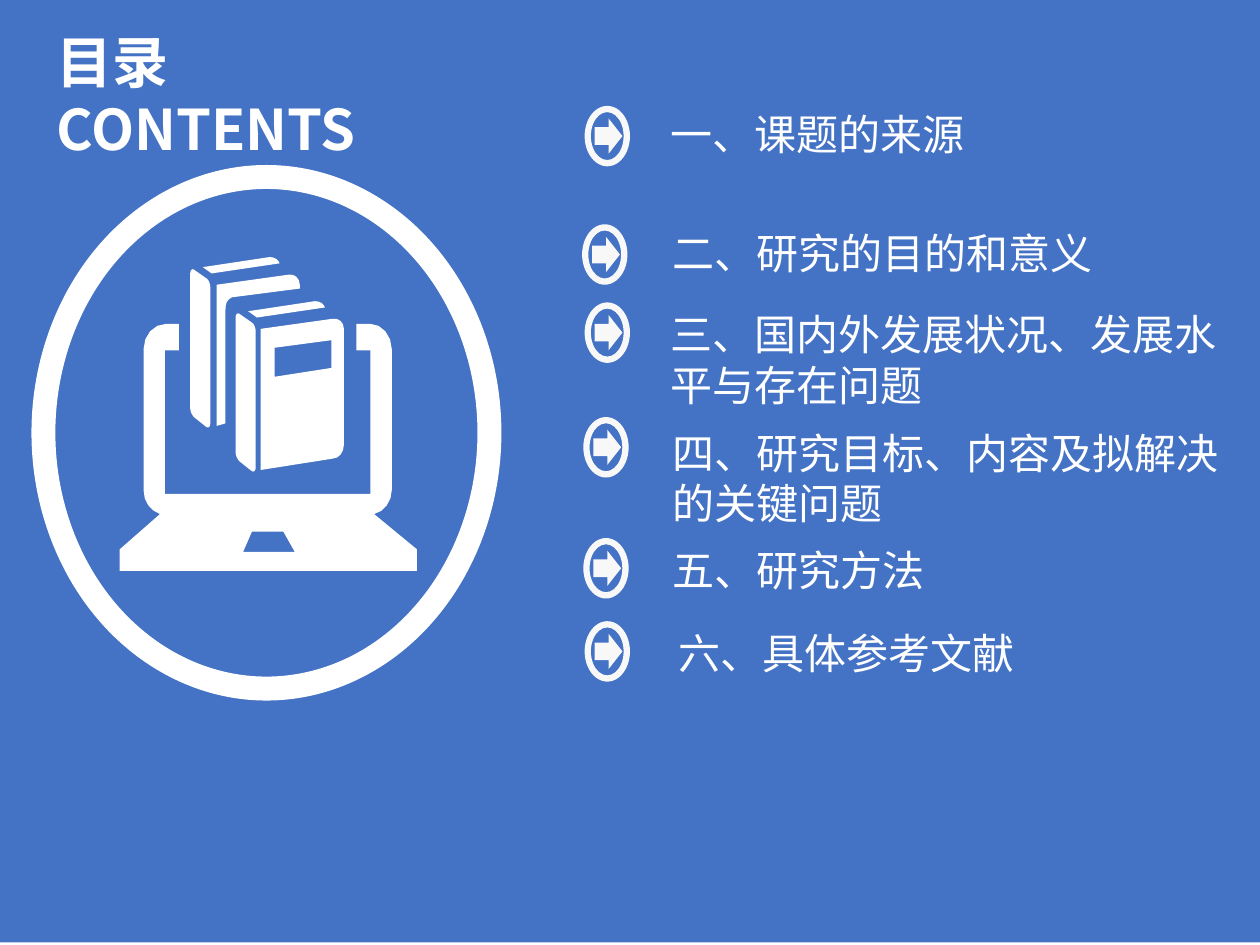
import math

from lxml import etree
from pptx import Presentation
from pptx.dml.color import RGBColor
from pptx.enum import shapes, text
from pptx.oxml import ns
from pptx.util import Inches, Pt

BLUE = RGBColor(0x44, 0x72, 0xC4)
WHITE = RGBColor(0xFF, 0xFF, 0xFF)
OFF_WHITE = RGBColor(0xF8, 0xF8, 0xF8)
FONT = "Noto Sans CJK SC"

# Badge left and top, text left, top, width and height, wrap, wording
ITEMS = [
    (4.64, 0.84, 5.22, 0.81, 2.56, 0.5, False, "一、课题的来源"),
    (4.62, 1.78, 5.24, 1.76, 3.57, 0.5, False, "二、研究的目的和意义"),
    (4.64, 2.40, 5.22, 2.40, 4.68, 0.91, True, "三、国内外发展状况、发展水平与存在问题"),
    (4.63, 3.31, 5.24, 3.34, 4.68, 0.91, True, "四、研究目标、内容及拟解决的关键问题"),
    (4.63, 4.27, 5.24, 4.27, 2.22, 0.5, False, "五、研究方法"),
    (4.64, 4.93, 5.29, 4.93, 3.46, 0.81, True, "六、具体参考文献"),
]

# Outlines in inches from the icon's corner: pairs are line ends,
# sixes are two control points and the end of a curve.
BOOK_TOP = [(1.36, 0.81), (1.43, 0.86), (1.97, 0.78),
            (1.96, 0.75, 1.93, 0.73, 1.89, 0.73)]
BOOK_SPINE = [(1.29, 0.83), (1.39, 0.90), (1.41, 0.91, 1.42, 0.95, 1.42, 0.97),
              (1.42, 2.05), (1.42, 2.07, 1.41, 2.09, 1.39, 2.08), (1.29, 2.00),
              (1.28, 1.99, 1.26, 1.96, 1.26, 1.93), (1.26, 0.86),
              (1.26, 0.83, 1.28, 0.82, 1.29, 0.83)]
FRONT_COVER = [(1.82, 1.30), (2.39, 1.22), (2.44, 1.21, 2.48, 1.25, 2.48, 1.30),
               (2.48, 2.22), (2.48, 2.28, 2.44, 2.33, 2.39, 2.33), (1.82, 2.42)]
COVER_LABEL = [(1.93, 1.45), (2.38, 1.39), (2.38, 1.61), (1.93, 1.68)]
BACK_COVER = [(1.47, 0.95), (2.04, 0.87), (2.09, 0.86, 2.13, 0.90, 2.13, 0.95),
              (2.13, 0.98), (1.59, 1.05), (1.55, 1.07, 1.54, 1.10, 1.54, 1.15),
              (1.54, 2.05), (1.47, 2.07)]
TOUCHPAD = [(1.75, 2.91), (2.00, 2.91), (2.09, 3.07), (1.68, 3.07)]
LAPTOP = [(1.06, 1.47), (1.17, 1.47), (1.17, 1.26), (1.07, 1.26),
          (0.97, 1.26, 0.89, 1.35, 0.89, 1.46), (0.89, 2.58),
          (0.89, 2.67, 0.94, 2.74, 1.02, 2.77), (0.70, 3.05), (0.70, 3.22),
          (3.06, 3.22), (3.06, 3.05), (2.72, 2.77),
          (2.80, 2.75, 2.86, 2.67, 2.86, 2.58), (2.86, 1.46),
          (2.86, 1.35, 2.78, 1.26, 2.69, 1.26), (2.58, 1.26), (2.58, 1.47),
          (2.69, 1.47), (2.69, 2.61), (1.06, 2.61)]


def flatten(outline, steps=4):
    """Turn the curves of an outline into short straight steps."""
    points = []
    for part in outline:
        if len(part) == 2:
            points.append(part)
            continue
        ctrl = [points[-1], part[:2], part[2:4], part[4:]]
        for i in range(1, steps + 1):
            t = i / steps
            weights = [math.comb(3, k) * t**k * (1 - t)**(3 - k) for k in range(4)]
            points.append(tuple(sum(c * p[axis] for c, p in zip(weights, ctrl))
                                for axis in (0, 1)))
    return points


def shift(points, dx, dy):
    return [(x + dx, y + dy) for x, y in points]


def paint(sp, color):
    sp.shadow.inherit = False
    sp.fill.solid()
    sp.fill.fore_color.rgb = color
    sp.line.fill.background()


def add_preset(s, kind, left, top, width, height, color):
    sp = s.shapes.add_shape(kind, Inches(left), Inches(top),
                            Inches(width), Inches(height))
    paint(sp, color)
    return sp


def add_ring(s, left, top, width, height, thickness, color):
    sp = add_preset(s, shapes.MSO_SHAPE.DONUT, left, top, width, height, color)
    sp.adjustments[0] = thickness / min(width, height)


def add_outlines(s, left, top, outlines, color):
    """Draw closed outlines as one shape; inner outlines cut holes."""
    contours = [[(Inches(x), Inches(y)) for x, y in shift(points, left, top)]
                for points in outlines]
    builder = s.shapes.build_freeform(*contours[0][0], scale=1.0)
    for i, points in enumerate(contours):
        if i:
            builder.move_to(*points[0])
        builder.add_line_segments(points[1:], close=True)
    paint(builder.convert_to_shape(), color)


def add_text(p, wording, size, bold=False):
    p.alignment = text.PP_ALIGN.LEFT
    r = p.add_run()
    r.text = wording
    r.font.name, r.font.size, r.font.bold = FONT, Pt(size), bold
    r.font.color.rgb = WHITE
    ea = etree.SubElement(r.font._element, ns.qn("a:ea"))
    ea.set("typeface", FONT)


def add_background(s, left, top, width, height):
    sp = add_preset(s, shapes.MSO_SHAPE.RECTANGLE, left, top, width, height, BLUE)
    s.shapes._spTree.insert(2, sp._element)  # behind the title


def set_title(s, left, top, width, height):
    sp = s.shapes.title
    sp.left, sp.top = Inches(left), Inches(top)
    sp.width, sp.height = Inches(width), Inches(height)
    tf = sp.text_frame
    tf.word_wrap = True
    tf.auto_size = text.MSO_AUTO_SIZE.NONE
    tf.vertical_anchor = text.MSO_ANCHOR.TOP
    add_text(tf.paragraphs[0], "目录", 32, True)
    add_text(tf.add_paragraph(), "CONTENTS", 32, True)


def add_laptop_icon(s, left, top, width, height):
    add_ring(s, left, top, width, height, 0.19, WHITE)
    book = [flatten(BOOK_TOP), flatten(BOOK_SPINE)]
    front_book = [shift(points, 0.36, 0.35) for points in book]
    rest = [flatten(o) for o in (FRONT_COVER, COVER_LABEL, BACK_COVER, LAPTOP, TOUCHPAD)]
    add_outlines(s, left, top, book + front_book + rest, WHITE)


def add_badge(s, left, top, width, height):
    add_ring(s, left, top, width, height, 0.05, OFF_WHITE)
    add_preset(s, shapes.MSO_SHAPE.RIGHT_ARROW, left + 0.08, top + 0.1,
               width - 0.14, height - 0.2, OFF_WHITE)


def add_item_text(s, left, top, width, height, wrap, wording):
    sp = s.shapes.add_textbox(Inches(left), Inches(top), Inches(width), Inches(height))
    tf = sp.text_frame
    tf.word_wrap = wrap
    tf.auto_size = text.MSO_AUTO_SIZE.SHAPE_TO_FIT_TEXT
    add_text(tf.paragraphs[0], wording, 24)


def main():
    prs = Presentation()
    prs.slide_width, prs.slide_height = Inches(10), Inches(7.5)
    s = prs.slides.add_slide(prs.slide_layouts[5])

    add_background(s, 0, -0.02, 10, 7.5)
    set_title(s, 0.35, 0.17, 5.51, 1.99)
    add_laptop_icon(s, 0.25, 1.31, 3.73, 4.25)

    # Contents list
    for badge_left, badge_top, *item in ITEMS:
        add_badge(s, badge_left, badge_top, 0.36, 0.48)
        add_item_text(s, *item)

    prs.save("out.pptx")


if __name__ == "__main__":
    main()
